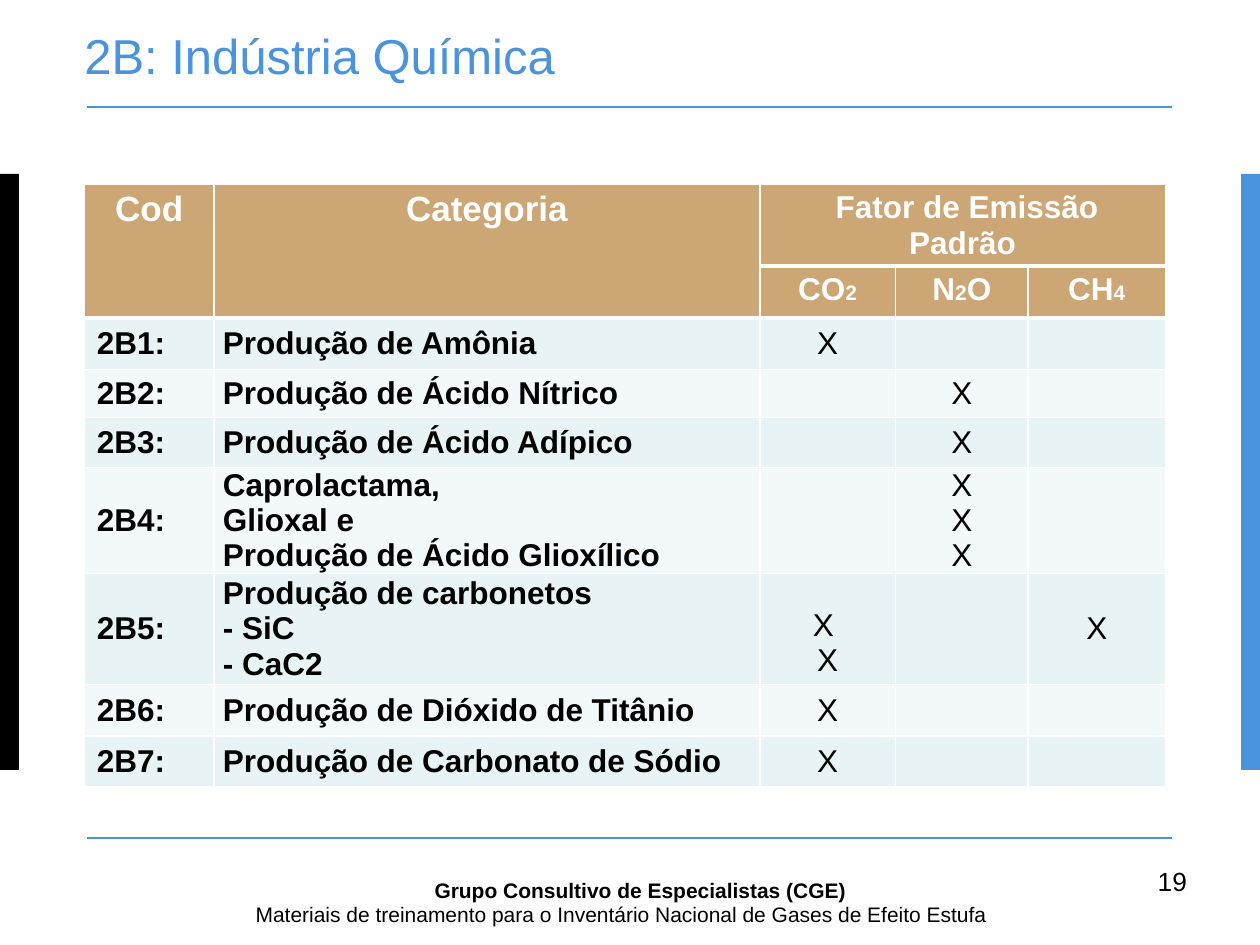
from lxml import etree
from pptx import Presentation
from pptx.dml.color import RGBColor
from pptx.enum.shapes import MSO_CONNECTOR, MSO_SHAPE
from pptx.enum.text import MSO_ANCHOR, PP_ALIGN
from pptx.oxml.ns import qn
from pptx.util import Pt

LINE, RECT = MSO_CONNECTOR.STRAIGHT, MSO_SHAPE.RECTANGLE
TOP, MIDDLE = MSO_ANCHOR.TOP, MSO_ANCHOR.MIDDLE
LEFT, CENTER = PP_ALIGN.LEFT, PP_ALIGN.CENTER

BLUE, BLACK, WHITE, TAN = "4B93DC", "000000", "FFFFFF", "CCA674"
BANDS = "E7F3F4", "F3F9FA"
COLS = 74.2, 311.8, 77.6, 75.8, 78.4
ROWS = 46.8, 29.8, 29.4, 27.4, 28.8, 60.6, 63.2, 29.6, 29
CODES = [
    ("2B1:", "Produção de Amônia", "X", "", ""),
    ("2B2:", "Produção de Ácido Nítrico", "", "X", ""),
    ("2B3:", "Produção de Ácido Adípico", "", "X", ""),
    ("2B4:", "Caprolactama,\nGlioxal e\nProdução de Ácido Glioxílico",
     "", "X\nX\nX", ""),
    ("2B5:", "Produção de carbonetos\n- SiC\n- CaC2", "X \nX", "", "X"),
    ("2B6:", "Produção de Dióxido de Titânio", "X", "", ""),
    ("2B7:", "Produção de Carbonato de Sódio", "X", "", ""),
]


def color(code):
    return RGBColor.from_string(code)


def style(font, size, tint, bold=False):
    font.name, font.size, font.bold = "Arial", Pt(size), bold
    font.color.rgb = color(tint)


def edge(cell, top, bottom):
    """White cell borders; top and bottom are widths in points."""
    props = cell._tc.get_or_add_tcPr()
    sides = ("L", 1), ("R", 1), ("T", top), ("B", bottom)
    for spot, (side, width) in enumerate(sides):
        line = etree.Element(qn(f"a:ln{side}"), w=str(Pt(width)))
        fill = etree.SubElement(line, qn("a:solidFill"))
        etree.SubElement(fill, qn("a:srgbClr"), val=WHITE)
        props.insert(spot, line)


def fill_cell(cell, text, size, tint, bold, align, back):
    cell.fill.solid()
    cell.fill.fore_color.rgb = color(back)
    cell.text = text
    for para in cell.text_frame.paragraphs:
        para.alignment = align
        style(para.font, size, tint, bold)


def add_head(table):
    for col in (0, 1):
        table.cell(0, col).merge(table.cell(1, col))
    table.cell(0, 2).merge(table.cell(0, 4))
    labels = [("Cod", "Categoria", " Fator de Emissão Padrão", "", ""),
              ("", "", "CO2", "N2O", "CH4")]
    for row, line in enumerate(labels):
        for col, text in enumerate(line):
            cell = table.cell(row, col)
            size = 20 if col < 2 else 18
            fill_cell(cell, "" if row else text, size, WHITE, True, CENTER, TAN)
            cell.vertical_anchor = TOP
            cell.margin_bottom = 0
            if row:
                for char in text:
                    run = cell.text_frame.paragraphs[0].add_run()
                    run.text = char
                    if char.isdigit():
                        run.font.size = Pt(12)
            edge(cell, 3 if row else 1, 3)


def add_body(table):
    for row, line in enumerate(CODES):
        for col, text in enumerate(line):
            cell = table.cell(row + 2, col)
            fill_cell(cell, text, 18, BLACK, col < 2,
                      LEFT if col < 2 else CENTER, BANDS[row % 2])
            cell.vertical_anchor = MIDDLE
            cell.margin_top = cell.margin_bottom = 0
            cell.margin_left = cell.margin_right = Pt(5 if col else 7.2)
            edge(cell, 1 if row else 3, 1)
    table.cell(6, 2).margin_top = Pt(16)


def add_grid(slide, x, y):
    frame = slide.shapes.add_table(len(ROWS), len(COLS), Pt(x), Pt(y),
                                   Pt(sum(COLS)), Pt(sum(ROWS)))
    table = frame.table
    table.first_row = table.horz_banding = False
    for col, width in zip(table.columns, COLS):
        col.width = Pt(width)
    for row, height in zip(table.rows, ROWS):
        row.height = Pt(height)
    add_head(table)
    add_body(table)


def add_bar(slide, x, y, w, h, tint):
    bar = slide.shapes.add_shape(RECT, Pt(x), Pt(y), Pt(w), Pt(h))
    bar.shadow.inherit = False
    bar.fill.solid()
    bar.fill.fore_color.rgb = color(tint)
    bar.line.fill.background()


def add_rule(slide, x, y, w):
    rule = slide.shapes.add_connector(LINE, Pt(x), Pt(y), Pt(x + w), Pt(y))
    rule.line.color.rgb = color(BLUE)
    rule.line.width = Pt(1)
    etree.SubElement(rule._element.spPr, qn("a:effectLst"))


def add_frame(slide, w):
    """Side bars and the rules above and below the content."""
    add_bar(slide, 0, 99.4, 10.8, 340.6, BLACK)
    add_bar(slide, w - 10.8, 99.4, 10.8, 340.6, BLUE)
    for y in (61.2, 478.8):
        add_rule(slide, 49.7, y, 620)


def add_title(slide, x, y, w, h):
    title = slide.shapes.title
    title.left, title.top, title.width, title.height = map(Pt, (x, y, w, h))
    frame = title.text_frame
    frame.text = "2B: Indústria Química"
    frame.vertical_anchor = MIDDLE
    frame.margin_left = frame.margin_right = 0
    frame.margin_top = frame.margin_bottom = 0
    para = frame.paragraphs[0]
    para.alignment = LEFT
    para.line_spacing = Pt(15)
    style(para.font, 28, BLUE)


def add_note(slide, x, y, w, h, text, size, bold=False):
    box = slide.shapes.add_textbox(Pt(x), Pt(y), Pt(w), Pt(h))
    box.text_frame.word_wrap = True
    para = box.text_frame.paragraphs[0]
    para.text = text
    style(para.font, size, BLACK, bold)


def add_foot(slide, x, y):
    add_note(slide, x + 515.5, y, 33.8, 25.2, "19", 15)
    add_note(slide, x, y + 20.9, 480.2, 14.4,
             "Materiais de treinamento para o Inventário Nacional "
             "de Gases de Efeito Estufa", 12)
    add_note(slide, x + 102.2, y + 7.2, 260.6, 14.4,
             "Grupo Consultivo de Especialistas (CGE)", 12, True)


def main():
    deck = Presentation()
    deck.slide_width, deck.slide_height = Pt(720), Pt(540)
    slide = deck.slides.add_slide(deck.slide_layouts[5])
    add_frame(slide, 720)
    add_title(slide, 48.2, 20.9, 623.5, 39.6)
    add_grid(slide, 48.2, 105.1)
    add_foot(slide, 139, 491)
    deck.save("out.pptx")


if __name__ == "__main__":
    main()
